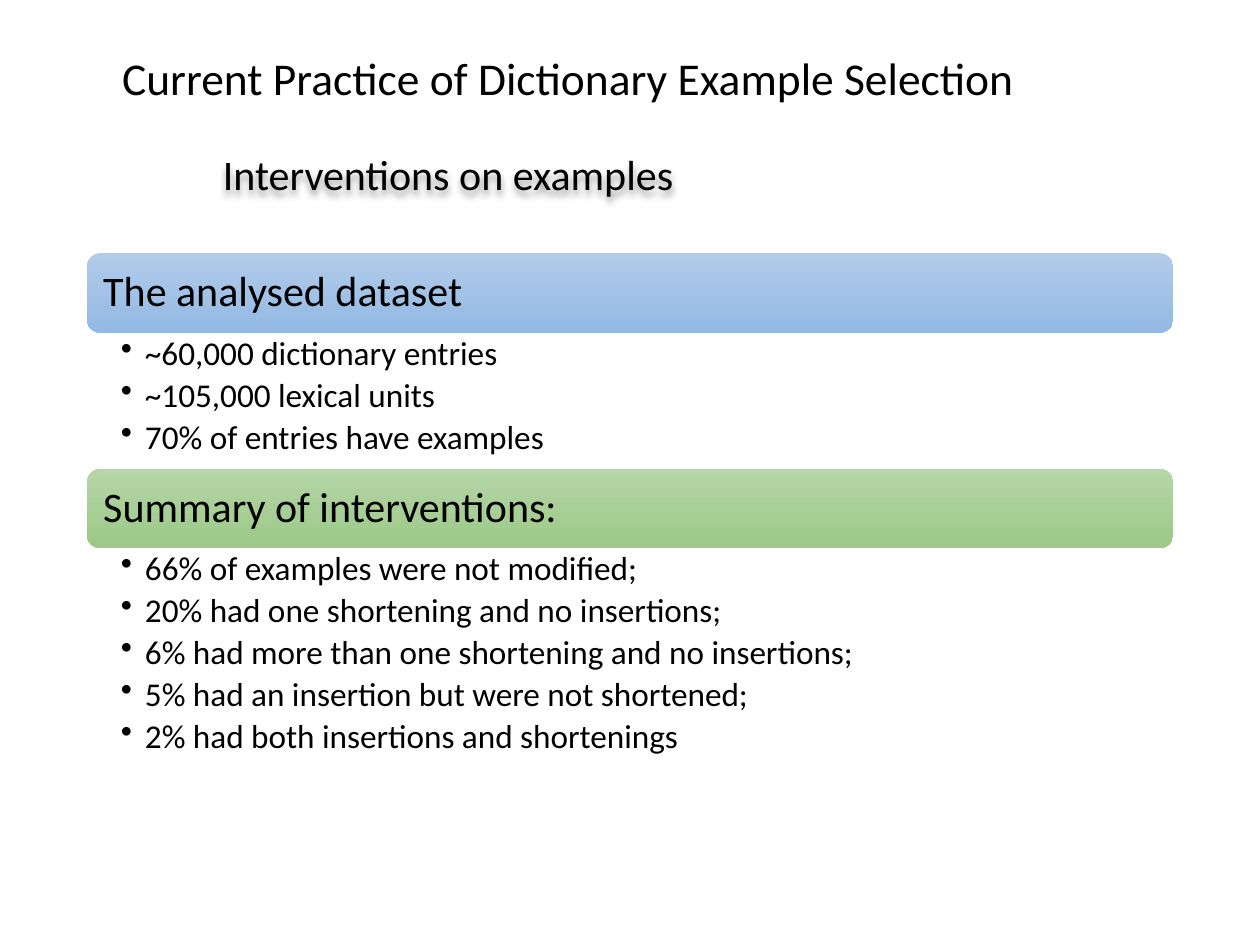
"""Build the slide on interventions made to dictionary examples."""
from lxml import etree
from pptx import Presentation
from pptx.dml.color import RGBColor
from pptx.enum import shapes, text
from pptx.oxml import ns, parse_xml
from pptx.util import Inches, Pt

BLACK = RGBColor(0x00, 0x00, 0x00)
BLUE_TOP = RGBColor(0xB1, 0xCB, 0xE9)
BLUE_BOTTOM = RGBColor(0x93, 0xB9, 0xE4)
GREEN_TOP = RGBColor(0xB5, 0xD5, 0xA7)
GREEN_BOTTOM = RGBColor(0x9C, 0xC9, 0x87)

LEFT, WIDTH, BAR_HEIGHT = 0.69, 8.62, 0.63
SECTIONS = [
    ("The analysed dataset", 2.01, 1.09, BLUE_TOP, BLUE_BOTTOM, [
        "~60,000 dictionary entries",
        "~105,000 lexical units",
        "70% of entries have examples",
    ]),
    ("Summary of interventions:", 3.72, 2.39, GREEN_TOP, GREEN_BOTTOM, [
        "66% of examples were not modified;",
        "20% had one shortening and no insertions;",
        "6% had more than one shortening and no insertions;",
        "5% had an insertion but were not shortened;",
        "2% had both insertions and shortenings",
    ]),
]


def set_frame(shape, anchor, left, top, right, bottom):
    frame = shape.text_frame
    frame.word_wrap = True
    frame.vertical_anchor = anchor
    frame.margin_left, frame.margin_top = Inches(left), Inches(top)
    frame.margin_right, frame.margin_bottom = Inches(right), Inches(bottom)
    return frame


def write(paragraph, content, size):
    paragraph.alignment = text.PP_ALIGN.LEFT
    paragraph.line_spacing = 0.9
    run = paragraph.add_run()
    run.text = content
    run.font.name = "Calibri"
    run.font.size = Pt(size)
    run.font.color.rgb = BLACK


presentation = Presentation()
presentation.slide_width, presentation.slide_height = Inches(10), Inches(7.5)
slide = presentation.slides.add_slide(presentation.slide_layouts[6])

title = slide.shapes.add_textbox(Inches(0.87), Inches(0.3), Inches(7.91), Inches(0.68))
frame = set_frame(title, text.MSO_ANCHOR.MIDDLE, 0.1, 0.05, 0.1, 0.05)
write(frame.paragraphs[0], "Current Practice of Dictionary Example Selection", 26)

for heading, top, list_height, top_color, bottom_color, items in SECTIONS:
    bar = slide.shapes.add_shape(
        shapes.MSO_SHAPE.ROUNDED_RECTANGLE,
        Inches(LEFT), Inches(top), Inches(WIDTH), Inches(BAR_HEIGHT))
    bar.shadow.inherit = False
    bar.line.fill.background()
    bar.fill.gradient()
    bar.fill.gradient_angle = 270
    for stop, color in zip(bar.fill.gradient_stops, (top_color, bottom_color)):
        stop.color.rgb = color
    frame = set_frame(bar, text.MSO_ANCHOR.MIDDLE, 0.1, 0.1, 0.1, 0.1)
    write(frame.paragraphs[0], heading, 24)

    bullet_list = slide.shapes.add_textbox(
        Inches(LEFT), Inches(top + BAR_HEIGHT), Inches(WIDTH), Inches(list_height))
    frame = set_frame(bullet_list, text.MSO_ANCHOR.TOP, 0.27, 0.03, 0.19, 0.03)
    for index, item in enumerate(items):
        paragraph = frame.add_paragraph() if index else frame.paragraphs[0]
        write(paragraph, item, 19)
        paragraph.space_after = Pt(3.5)
        properties = paragraph._p.get_or_add_pPr()
        properties.set("marL", str(Inches(0.19)))
        properties.set("indent", str(-Inches(0.19)))
        etree.SubElement(properties, ns.qn("a:buChar")).set("char", "•")

subtitle = slide.shapes.add_textbox(Inches(1.67), Inches(1.16), Inches(4.77), Inches(0.48))
frame = set_frame(subtitle, text.MSO_ANCHOR.MIDDLE, 0.1, 0.05, 0.1, 0.05)
write(frame.paragraphs[0], "Interventions on examples", 24)
subtitle._element.spPr.append(parse_xml(
    f'<a:effectLst {ns.nsdecls("a")}>'
    '<a:outerShdw blurRad="50800" dist="38100" dir="5400000" algn="t" rotWithShape="0">'
    '<a:srgbClr val="000000"><a:alpha val="40000"/></a:srgbClr>'
    '</a:outerShdw></a:effectLst>'))

presentation.save("out.pptx")
